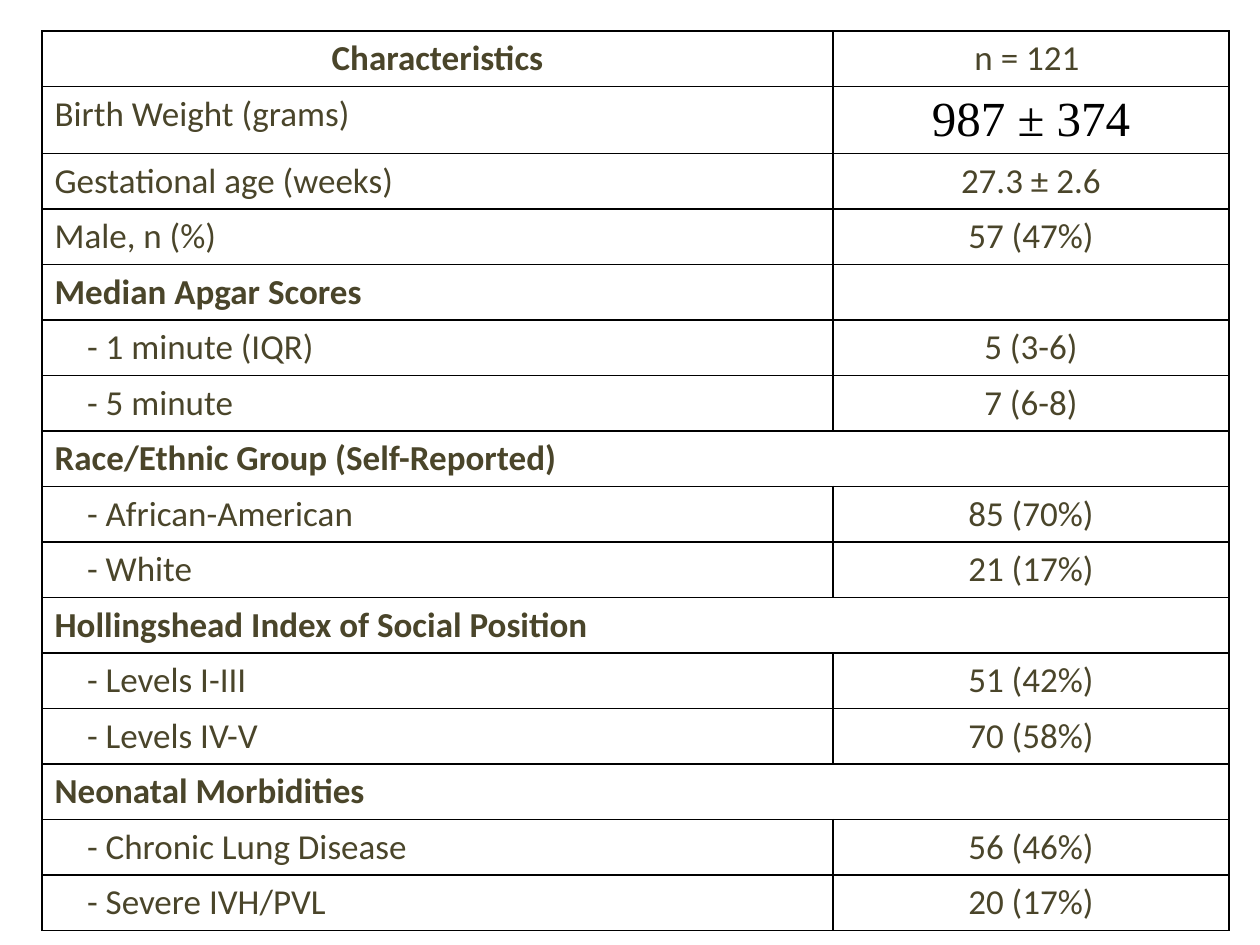
from pptx import Presentation
from pptx import util as u
from pptx.dml.color import RGBColor
from pptx.enum import text
from pptx.oxml import parse_xml
from pptx.oxml.ns import nsdecls

EMU_PER_PX = 914400 / 126
COLORS = {"olive": "4A452A", "black": "000000"}
CENTER = text.PP_ALIGN.CENTER

# Each row: label, value, kind; a "group" label spans both columns
ROWS = [
    ("Characteristics", "n = 121 ", "header"),
    ("Birth Weight (grams)", "987 ± 374", "emphasis"),
    ("Gestational age (weeks)", "27.3 ± 2.6", "plain"),
    ("Male, n (%)", "57 (47%)", "plain"),
    ("Median Apgar Scores", "", "heading"),
    ("- 1 minute (IQR)", "5 (3-6)", "item"),
    ("- 5 minute", "7 (6-8)", "item"),
    ("Race/Ethnic Group (Self-Reported)", "", "group"),
    ("- African-American", "85 (70%)", "item"),
    ("- White", "21 (17%)", "item"),
    ("Hollingshead Index of Social Position", "", "group"),
    ("- Levels I-III", "51 (42%)", "item"),
    ("- Levels IV-V", "70 (58%)", "item"),
    ("Neonatal Morbidities", "", "group"),
    ("- Chronic Lung Disease", "56 (46%)", "item"),
    ("- Severe IVH/PVL", "20 (17%)", "item"),
]


def px(length):
    return u.Emu(round(length * EMU_PER_PX))


def write(frame, words, size=20, font="Calibri", color="olive", bold=False, align=None):
    paragraph = frame.paragraphs[0]
    paragraph.alignment = align
    run = paragraph.add_run()
    run.text = words
    run.font.size = u.Pt(size)
    run.font.name = font
    run.font.bold = bold
    run.font.color.rgb = RGBColor.from_string(COLORS[color])


class SlideBuilder:
    row_height = 55
    item_indent = 45
    border_width = u.Pt(1)

    def __init__(self, slide):
        self.slide = slide

    def border(self, cell):
        properties = cell._tc.get_or_add_tcPr()
        for side in ("lnL", "lnR", "lnT", "lnB"):
            properties.append(parse_xml(
                f'<a:{side} {nsdecls("a")} w="{self.border_width}"><a:solidFill>'
                f'<a:srgbClr val="{COLORS["black"]}"/></a:solidFill></a:{side}>'))
        cell.fill.background()

    def table(self, left, top, widths, rows):
        grid = self.slide.shapes.add_table(
            len(rows), len(widths), px(left), px(top),
            px(sum(widths)), px(self.row_height * len(rows))).table
        for column, width in zip(grid.columns, widths):
            column.width = px(width)
        for cell in grid.iter_cells():
            self.border(cell)
        for index, (label, value, kind) in enumerate(rows):
            grid.rows[index].height = px(self.row_height)
            self.fill_row(grid.cell(index, 0), grid.cell(index, 1), label, value, kind)

    def fill_row(self, label_cell, value_cell, label, value, kind):
        if kind == "group":
            label_cell.merge(value_cell)
        if kind == "item":
            label_cell.margin_left = px(self.item_indent)
        write(label_cell.text_frame, label,
              bold=kind in ("header", "heading", "group"),
              align=CENTER if kind == "header" else None)
        if value:
            accent = {"size": 28, "font": "Times New Roman", "color": "black"}
            write(value_cell.text_frame, value, align=CENTER,
                  **(accent if kind == "emphasis" else {}))


def main():
    deck = Presentation()
    deck.slide_width, deck.slide_height = px(1260), px(945)
    builder = SlideBuilder(deck.slides.add_slide(deck.slide_layouts[6]))

    # Patient characteristics
    builder.table(42, 31, [791, 396], ROWS)
    deck.save("out.pptx")


if __name__ == "__main__":
    main()
